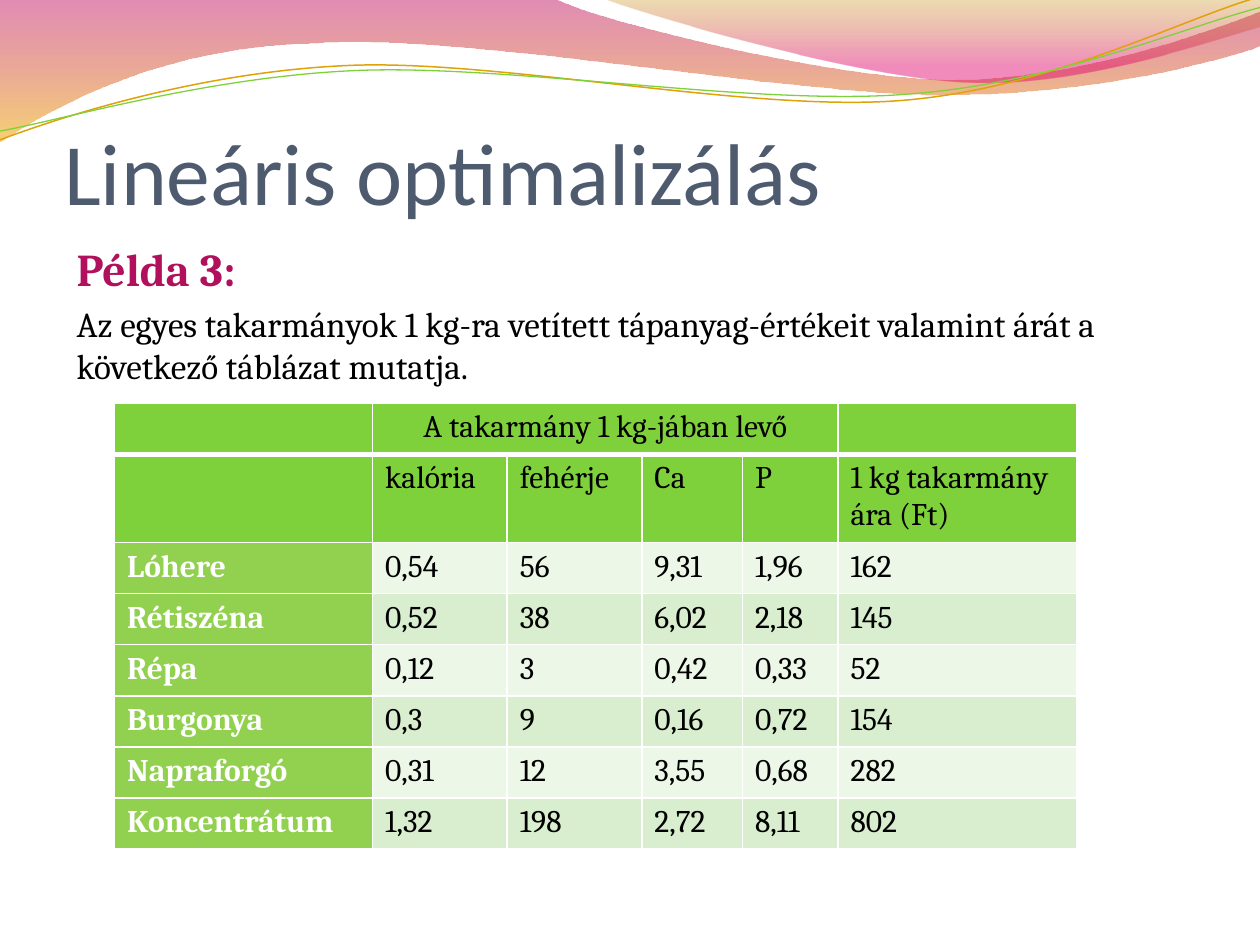
from lxml import etree
from pptx import Presentation
from pptx.dml.color import RGBColor
from pptx.enum.text import MSO_ANCHOR, MSO_AUTO_SIZE, PP_ALIGN
from pptx.oxml import parse_xml
from pptx.oxml.ns import nsdecls, qn
from pptx.util import Inches, Pt

CENTER, LEFT = PP_ALIGN.CENTER, PP_ALIGN.LEFT
TITLE_ONLY = 5

COLORS = {
    "title": "4E5B6F", "accent": "B0105C", "text": "000000", "white": "FFFFFF",
    "header": "7FD13B", "label": "92D050", "odd": "ECF7E8", "even": "D8EECE",
    "rose": "BD0059", "amber": "F0AB00", "gold": "C38B00", "pink": "E1006B",
    "orange line": "E0A209", "green line": "7FD13B",
}

TITLE = "Lineáris optimalizálás"
# text, size, colour, bold
BODY = [
    ("Példa 3:", 26, "accent", True),
    ("Az egyes takarmányok 1 kg-ra vetített tápanyag-értékeit valamint árát "
     "a következő táblázat mutatja.", 20, "text", False),
]
TABLE = [
    ["", "A takarmány 1 kg-jában levő", "", "", "", ""],
    ["", "kalória", "fehérje", "Ca", "P", "1 kg takarmány ára (Ft)"],
    ["Lóhere", "0,54", "56", "9,31", "1,96", "162"],
    ["Rétiszéna", "0,52", "38", "6,02", "2,18", "145"],
    ["Répa", "0,12", "3", "0,42", "0,33", "52"],
    ["Burgonya", "0,3", "9", "0,16", "0,72", "154"],
    ["Napraforgó", "0,31", "12", "3,55", "0,68", "282"],
    ["Koncentrátum", "1,32", "198", "2,72", "8,11", "802"],
]
TABLE_WIDTH, TABLE_HEIGHT = 7.64, 3.51
COLUMN_SHARES = [2.05, 1.07, 1.07, 0.8, 0.76, 1.9]
TALL_ROW_HEIGHT = 0.67
HEADER_ROWS = 2

# Outlines: a pair is a straight step, six numbers are a Bézier step
BANDS = [
    ([(0, 0), (4.4, -0.01), (4.76, 0.17, 6.64, 0.63, 7.58, 0.63),
      (8.53, 0.63, 9.58, 0.26, 10, 0.09), (10.01, 0.36),
      (9.83, 0.44, 8.7, 0.76, 7.46, 0.75), (6.22, 0.75, 3.82, 0.28, 2.57, 0.34),
      (1.29, 0.36, 0.46, 0.83, -0.01, 1.13)],
     [(0, "rose", 45), (100, "amber", 55)]),
    ([(4.79, -0.01), (5.09, 0.11, 6.82, 0.62, 7.69, 0.65),
      (8.56, 0.69, 9.61, 0.32, 10, 0.21), (10, 0)],
     [(0, "gold", 30), (80, "pink", 45)]),
]
STRANDS = [
    ([(0, 1.11), (0.48, 0.93, 1.58, 0.57, 2.77, 0.52),
      (3.95, 0.47, 5.93, 0.89, 7.13, 0.8), (8.33, 0.71, 9.38, 0.15, 9.98, -0.02)],
     "orange line", 0.85),
    ([(0, 1.04), (0.47, 0.96, 1.64, 0.61, 2.83, 0.56),
      (4.03, 0.51, 5.97, 0.84, 7.17, 0.75), (8.36, 0.67, 9.41, 0.21, 10, 0.06)],
     "green line", 0.75),
]


def rgb(name):
    return RGBColor.from_string(COLORS[name])


def add_outline(slide, steps, closed):
    """Build the outline through its end points, then bend the Bézier steps."""
    points = [(Inches(step[-2]), Inches(step[-1])) for step in steps]
    builder = slide.shapes.build_freeform(*points[0])
    builder.add_line_segments(points[1:], close=closed)
    shape = builder.convert_to_shape()
    shape.shadow.inherit = False
    segments = list(shape.element.iter(qn("a:lnTo")))
    for segment, step in zip(segments, steps[1:]):
        if len(step) == 6:
            curve = etree.Element(qn("a:cubicBezTo"))
            for x, y in (step[:2], step[2:4], step[4:]):
                etree.SubElement(curve, qn("a:pt"), x=str(Inches(x) - shape.left),
                                 y=str(Inches(y) - shape.top))
            segment.getparent().replace(segment, curve)
    return shape


def fill_gradient(shape, stops):
    """Vertical gradient whose stops carry their own opacity."""
    shape.fill.gradient()
    gradient = shape.element.spPr.find(qn("a:gradFill"))
    for child in list(gradient):
        gradient.remove(child)
    stop_list = etree.SubElement(gradient, qn("a:gsLst"))
    for position, color, opacity in stops:
        stop = etree.SubElement(stop_list, qn("a:gs"), pos=str(position * 1000))
        value = etree.SubElement(stop, qn("a:srgbClr"), val=COLORS[color])
        etree.SubElement(value, qn("a:alpha"), val=str(opacity * 1000))
    etree.SubElement(gradient, qn("a:lin"), ang="5400000", scaled="0")


def add_span(para, text, size, color, bold=False, font="Cambria"):
    span = para.add_run()
    span.text = text
    span.font.name, span.font.size, span.font.bold = font, Pt(size), bold
    span.font.color.rgb = rgb(color)


def set_borders(cell, widths):
    properties = cell._tc.get_or_add_tcPr()
    for index, (side, width) in enumerate(widths.items()):
        properties.insert(index, parse_xml(
            f'<a:ln{side} {nsdecls("a")} w="{Pt(width)}"><a:solidFill>'
            f'<a:srgbClr val="{COLORS["white"]}"/></a:solidFill></a:ln{side}>'))


def add_waves(slide):
    for steps, stops in BANDS:
        band = add_outline(slide, steps, True)
        fill_gradient(band, stops)
        band.line.fill.background()
    for steps, color, width in STRANDS:
        strand = add_outline(slide, steps, False)
        strand.fill.background()
        strand.line.color.rgb = rgb(color)
        strand.line.width = Pt(width)


def add_title(slide):
    title = slide.shapes.title
    title.element.getparent().append(title.element)  # in front of the waves
    title.left, title.top, title.width, title.height = map(Inches, (0.51, 0.52, 9, 1.25))
    frame = title.text_frame
    frame.auto_size, frame.word_wrap = MSO_AUTO_SIZE.NONE, True
    frame.vertical_anchor = MSO_ANCHOR.BOTTOM
    frame.margin_left = frame.margin_right = frame.margin_bottom = 0
    frame.margin_top = Inches(0.05)
    para = frame.paragraphs[0]
    para.alignment = LEFT
    add_span(para, TITLE, 50, "title", font="Calibri")


def add_body(slide):
    box = slide.shapes.add_textbox(*map(Inches, (0.51, 1.86, 9, 5.38)))
    frame = box.text_frame
    frame.word_wrap = True
    for index, (text, size, color, bold) in enumerate(BODY):
        para = frame.add_paragraph() if index else frame.paragraphs[0]
        para.space_before = Pt(size * 0.2)
        add_span(para, text, size, color, bold)


def add_feed_table(slide):
    table = slide.shapes.add_table(
        len(TABLE), len(COLUMN_SHARES), Inches(0.91), Inches(3.2),
        Inches(TABLE_WIDTH), Inches(TABLE_HEIGHT)).table
    table.first_row = table.horz_banding = False
    for column, share in zip(table.columns, COLUMN_SHARES):
        column.width = Inches(TABLE_WIDTH * share / sum(COLUMN_SHARES))
    row_height = (TABLE_HEIGHT - TALL_ROW_HEIGHT) / (len(TABLE) - 1)
    for index, row in enumerate(table.rows):
        row.height = Inches(TALL_ROW_HEIGHT if index == 1 else row_height)
    table.cell(0, 1).merge(table.cell(0, 4))

    for r, texts in enumerate(TABLE):
        for c, text in enumerate(texts):
            cell = table.cell(r, c)
            is_label = r >= HEADER_ROWS and c == 0
            if r < HEADER_ROWS:
                fill = "header"
            else:
                fill = "label" if is_label else ("even" if r % 2 else "odd")
            cell.fill.solid()
            cell.fill.fore_color.rgb = rgb(fill)
            set_borders(cell, {"L": 1, "R": 1, "T": 3 if r == 1 else 1,
                               "B": 3 if r == 0 else 1})
            if text:
                para = cell.text_frame.paragraphs[0]
                para.alignment = CENTER if r == 0 else LEFT
                add_span(para, text, 18, "white" if is_label else "text", is_label)


def main():
    deck = Presentation()
    deck.slide_width, deck.slide_height = Inches(10), Inches(7.5)
    slide = deck.slides.add_slide(deck.slide_layouts[TITLE_ONLY])
    add_waves(slide)
    add_title(slide)
    add_body(slide)
    add_feed_table(slide)
    deck.save("out.pptx")


if __name__ == "__main__":
    main()
